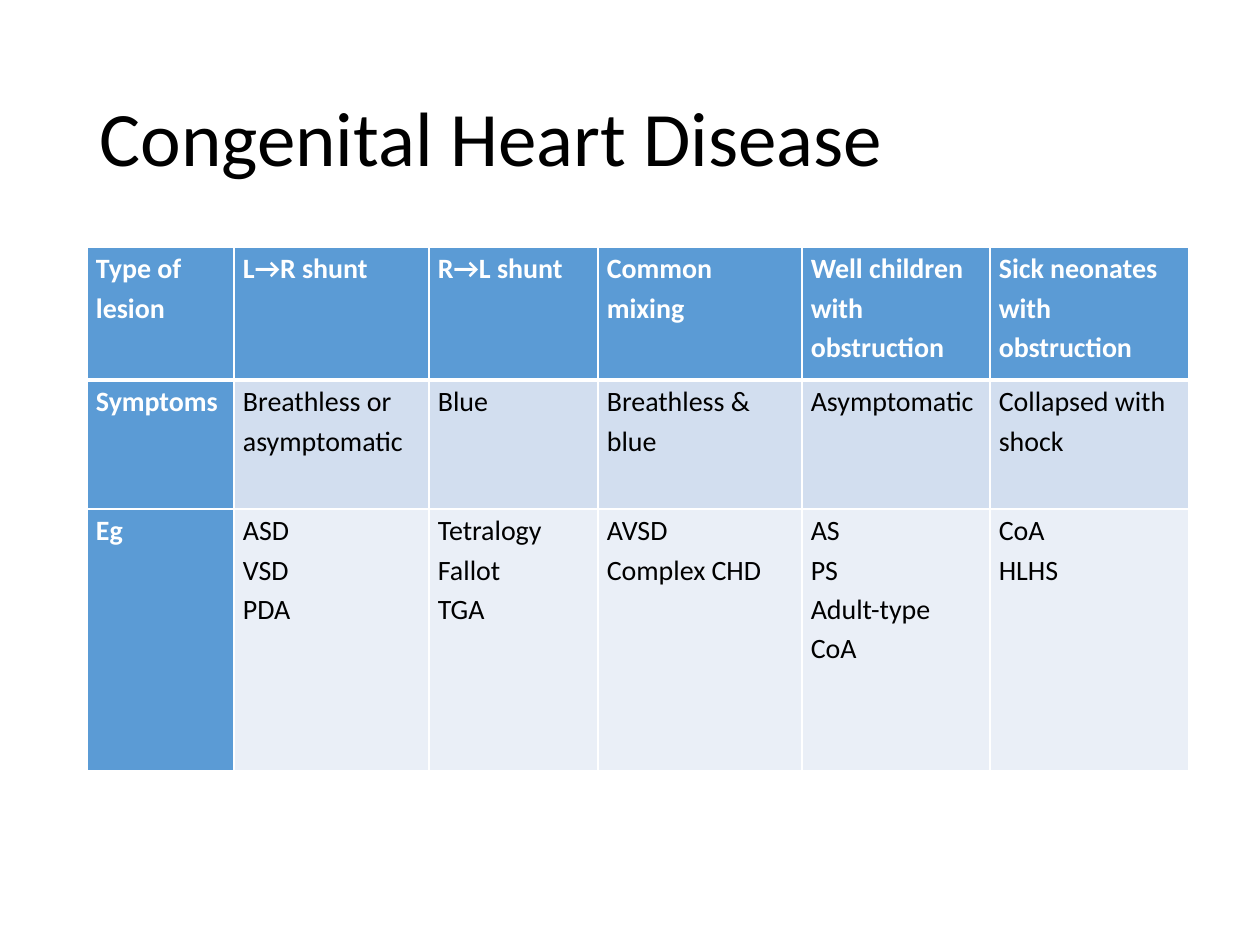
import pptx
import pptx.dml.color
import pptx.enum.text
import pptx.oxml
import pptx.oxml.ns
import pptx.util

TITLE = "Congenital Heart Disease"
ROWS = [
    [["Type of lesion"], ["L→R shunt"], ["R→L shunt"], ["Common mixing"],
     ["Well children with obstruction"], ["Sick neonates with obstruction"]],
    [["Symptoms"], ["Breathless or asymptomatic"], ["Blue"],
     ["Breathless & blue"], ["Asymptomatic"], ["Collapsed with shock"]],
    [["Eg"], ["ASD", "VSD", "PDA"], ["Tetralogy Fallot", "TGA"],
     ["AVSD", "Complex CHD"], ["AS", "PS", "Adult-type CoA"],
     ["CoA", "HLHS"]],
]
COLORS = {"head": "5B9BD5", "odd": "D2DEEF", "even": "EAEFF7",
          "white": "FFFFFF", "black": "000000"}
FONT = "Calibri"
WIDTHS = [147, 195, 169, 204, 188, 199]
HEIGHTS = [133, 129, 262]
LEFT, TOP = 87, 247
PAD = 9
SCALE = 914400 / 126


def px(n):
    return pptx.util.Emu(round(n * SCALE))


def rgb(name):
    return pptx.dml.color.RGBColor.from_string(COLORS[name])


def write(frame, lines, size=16, color="black", bold=False, space=1.15):
    frame.word_wrap = True
    for i, line in enumerate(lines):
        para = frame.paragraphs[0] if i == 0 else frame.add_paragraph()
        para.alignment = pptx.enum.text.PP_ALIGN.LEFT
        para.line_spacing = space
        run = para.add_run()
        run.text = line
        font = run.font
        font.name = FONT
        font.size = pptx.util.Pt(size)
        font.bold = bold
        font.color.rgb = rgb(color)


def edge(cell, **sides):
    """Draw white borders; sides gives each width in points, in L R T B order."""
    props = cell._tc.get_or_add_tcPr()
    for i, (side, width) in enumerate(sides.items()):
        props.insert(i, pptx.oxml.parse_xml(
            f'<a:ln{side} {pptx.oxml.ns.nsdecls("a")} w="{pptx.util.Pt(width)}">'
            f'<a:solidFill><a:srgbClr val="{COLORS["white"]}"/></a:solidFill>'
            f'</a:ln{side}>'))


def add_title(slide):
    title = slide.shapes.title
    title.left, title.top, title.width, title.height = map(px, (87, 50, 1086, 183))
    frame = title.text_frame
    frame.auto_size = pptx.enum.text.MSO_AUTO_SIZE.NONE
    frame.vertical_anchor = pptx.enum.text.MSO_ANCHOR.MIDDLE
    write(frame, [TITLE], size=44, space=0.9)


def add_grid(slide):
    grid = slide.shapes.add_table(
        len(HEIGHTS), len(WIDTHS), px(LEFT), px(TOP),
        px(sum(WIDTHS)), px(sum(HEIGHTS))).table
    grid.first_col = True
    for col, width in zip(grid.columns, WIDTHS):
        col.width = px(width)
    for row, height in zip(grid.rows, HEIGHTS):
        row.height = px(height)
    for r, row in enumerate(ROWS):
        for c, lines in enumerate(row):
            cell = grid.cell(r, c)
            head = r == 0 or c == 0
            cell.margin_left = cell.margin_right = px(PAD)
            cell.margin_top = cell.margin_bottom = 0
            cell.fill.solid()
            cell.fill.fore_color.rgb = rgb(
                "head" if head else "odd" if r % 2 else "even")
            edge(cell, L=1, R=1, T=3 if r == 1 else 1, B=3 if r == 0 else 1)
            write(cell.text_frame, lines, bold=head,
                  color="white" if head else "black")


def main():
    deck = pptx.Presentation()
    deck.slide_width, deck.slide_height = px(1260), px(945)
    slide = deck.slides.add_slide(deck.slide_layouts[5])
    add_title(slide)
    add_grid(slide)
    deck.save("out.pptx")


if __name__ == "__main__":
    main()
